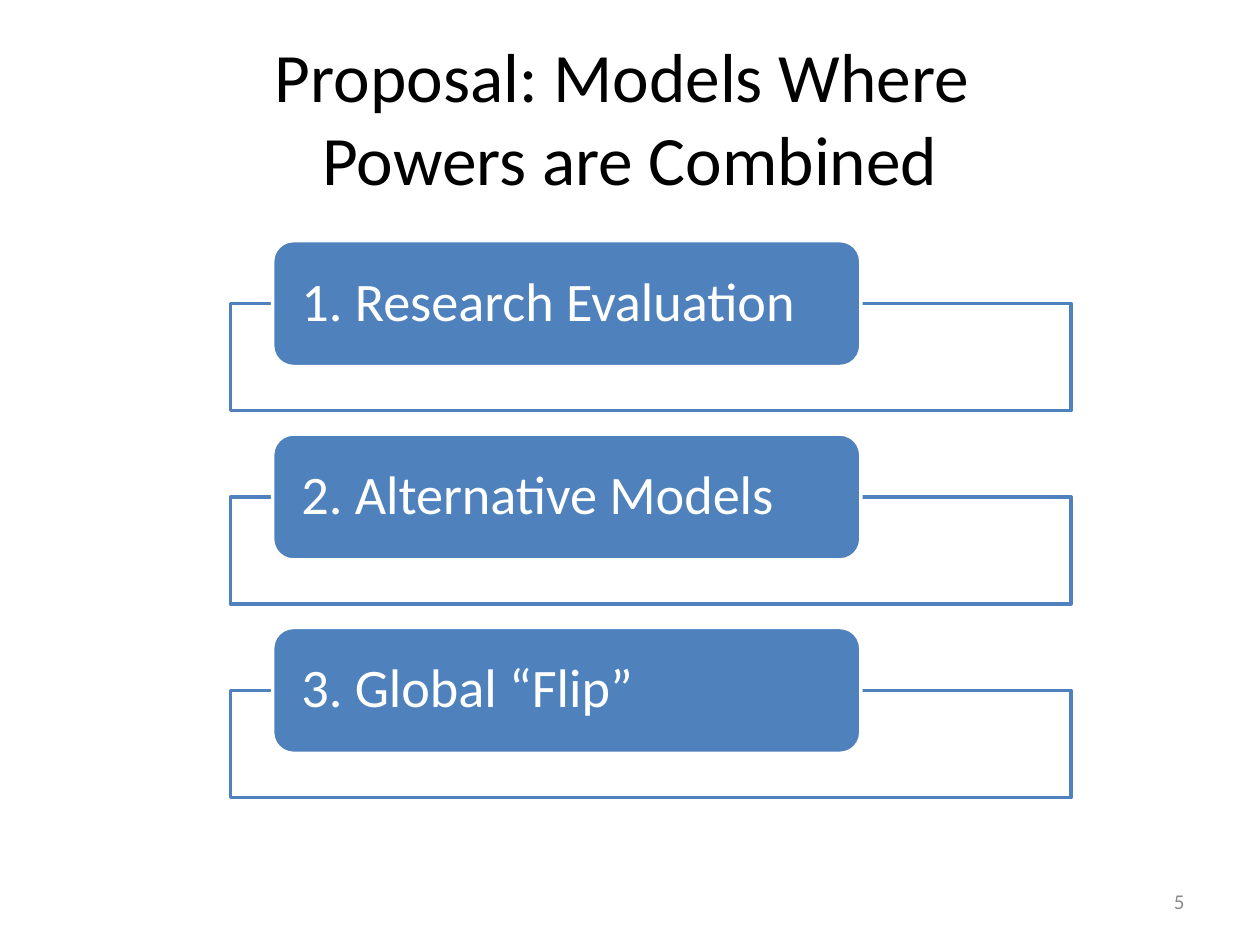
from lxml import etree
from pptx import Presentation
from pptx.dml.color import RGBColor
from pptx.enum import shapes, text
from pptx.oxml.ns import qn
from pptx.util import Inches, Pt

BLUE = RGBColor(0x4F, 0x81, 0xBD)
WHITE = RGBColor(0xFF, 0xFF, 0xFF)
BLACK = RGBColor(0, 0, 0)
GRAY = RGBColor(0x8C, 0x8C, 0x8C)
FONT = "Calibri"

PROPOSALS = ["1. Research Evaluation", "2. Alternative Models", "3. Global “Flip”"]
ROW_PITCH = 1.535


def add_run(paragraph, words, size, color):
    run = paragraph.add_run()
    run.text = words
    run.font.name = FONT
    run.font.size = Pt(size)
    run.font.color.rgb = color


def place_title(slide, left, top, width, height):
    title = slide.shapes.title
    title.left, title.top = Inches(left), Inches(top)
    title.width, title.height = Inches(width), Inches(height)
    title.text_frame.vertical_anchor = text.MSO_ANCHOR.MIDDLE
    paragraph = title.text_frame.paragraphs[0]
    paragraph.alignment = text.PP_ALIGN.CENTER
    add_run(paragraph, "Proposal: Models Where ", 39.6, BLACK)
    paragraph.add_line_break()
    add_run(paragraph, "Powers are Combined", 39.6, BLACK)


def add_box(slide, kind, left, top, width, height, fill, line):
    box = slide.shapes.add_shape(
        kind, Inches(left), Inches(top), Inches(width), Inches(height))
    box.shadow.inherit = False
    box.fill.solid()
    box.fill.fore_color.rgb = fill
    box.line.color.rgb = line
    box.line.width = Pt(2)
    return box


def add_proposal(slide, label, left, top, width):
    # Outlined panel behind the label, slightly transparent
    panel = add_box(slide, shapes.MSO_SHAPE.RECTANGLE,
                    left, top + 0.5, width, 0.85, WHITE, BLUE)
    color = panel.fill._xPr.find(qn("a:solidFill"))[0]
    etree.SubElement(color, qn("a:alpha"), val="90000")

    # Rounded label, inset by a twentieth and 70% as wide as the panel
    tab = add_box(slide, shapes.MSO_SHAPE.ROUNDED_RECTANGLE,
                  left + 0.05 * width, top, 0.7 * width, 1, BLUE, WHITE)
    frame = tab.text_frame
    frame.word_wrap = True
    frame.vertical_anchor = text.MSO_ANCHOR.MIDDLE
    frame.margin_left = frame.margin_right = Inches(0.18)
    frame.margin_top = frame.margin_bottom = 0
    paragraph = frame.paragraphs[0]
    paragraph.alignment = text.PP_ALIGN.LEFT
    paragraph.line_spacing = 0.9
    add_run(paragraph, label, 31, WHITE)


def add_proposal_list(slide, left, top, width):
    for row, label in enumerate(PROPOSALS):
        add_proposal(slide, label, left, top + row * ROW_PITCH, width)


def add_page_number(slide, left, top, width, height):
    box = slide.shapes.add_textbox(
        Inches(left), Inches(top), Inches(width), Inches(height))
    box.text_frame.word_wrap = True
    box.text_frame.vertical_anchor = text.MSO_ANCHOR.MIDDLE
    paragraph = box.text_frame.paragraphs[0]
    paragraph.alignment = text.PP_ALIGN.RIGHT
    add_run(paragraph, "5", 12, GRAY)


def main():
    presentation = Presentation()
    presentation.slide_width, presentation.slide_height = Inches(10), Inches(7.5)
    title_only = presentation.slide_layouts[5]
    slide = presentation.slides.add_slide(title_only)
    place_title(slide, 0.5, 0.3, 9, 1.25)
    add_proposal_list(slide, 1.83, 1.91, 6.67)
    add_page_number(slide, 7.17, 6.95, 2.33, 0.4)
    presentation.save("out.pptx")


if __name__ == "__main__":
    main()
